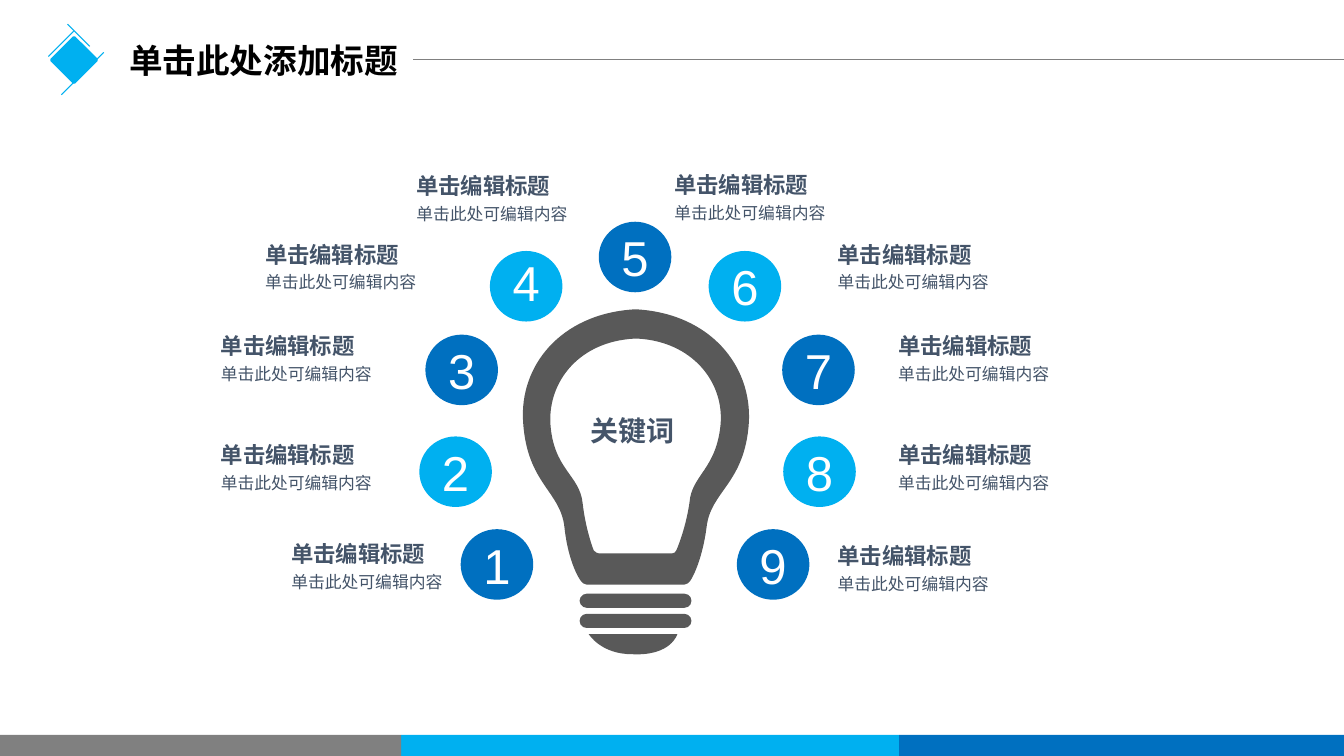
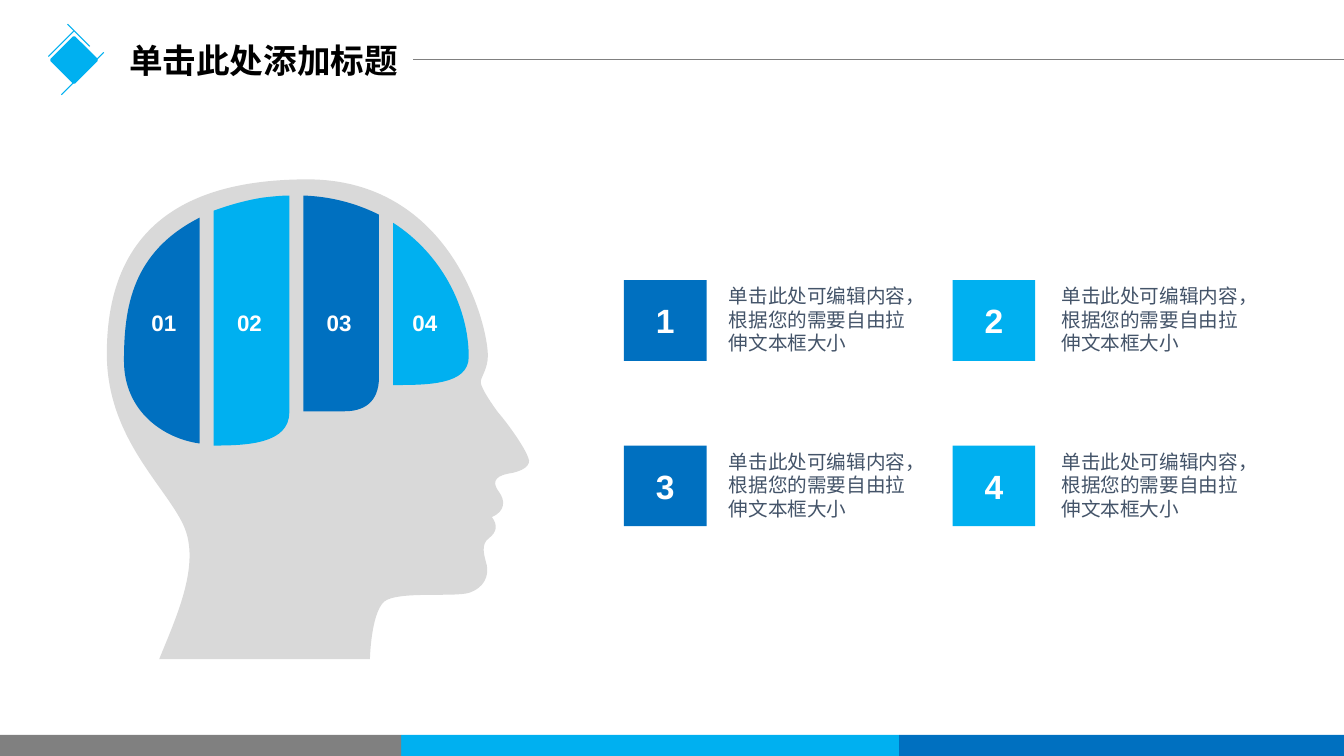
"""Build two idea slides: a light bulb with nine points and a head with four parts."""
from dataclasses import dataclass

from lxml import etree
from pptx import Presentation
from pptx.dml.color import RGBColor
from pptx.enum import shapes, text
from pptx.oxml.ns import qn
from pptx.util import Pt

PX = 9144
WIDTH, HEIGHT = 1333.33, 750


@dataclass(frozen=True)
class Theme:
    dark: str = "0070C0"
    light: str = "00B0F0"
    grey: str = "808080"
    bulb: str = "595959"
    head: str = "D9D9D9"
    ink: str = "445469"
    black: str = "000000"
    white: str = "FFFFFF"
    latin: str = "Arial"
    cjk: str = "Noto Sans CJK SC"
    title: int = 24
    number: int = 35
    square: int = 24
    keyword: int = 20
    heading: int = 16
    body: int = 14
    small: int = 12
    hairline: float = 0.75
    emblem_line: int = 2


T = Theme()
SHAPE = shapes.MSO_SHAPE
CENTER, LEFT = text.PP_ALIGN.CENTER, text.PP_ALIGN.LEFT
MIDDLE, TOP = text.MSO_ANCHOR.MIDDLE, text.MSO_ANCHOR.TOP

TITLE = "单击此处添加标题"
TITLE_BOX = (118, 35, 292, 50)
TITLE_RULE = (410, 59, WIDTH, 59)
DIAMOND = (51, 37, 45, 45)
EMBLEM_LINES = [(67, 24, 89, 46), (73, 31, 48, 56), (61, 94, 103, 52)]
FOOTER_TOP = 729
FOOTER_BANDS = [(398, 892, T.light), (892, WIDTH, T.dark), (0, 398, T.grey)]

KEYWORD, KEYWORD_BOX = "关键词", (553, 410, 150, 34)
LABEL_HEADING, LABEL_BODY = "单击编辑标题", "单击此处可编辑内容"
LABELS = [(289, 536), (219, 438), (219, 330), (263, 239), (413, 171),
          (669, 170), (831, 239), (891, 330), (891, 438), (831, 538)]
CIRCLE_SIZE = (72, 70)
CIRCLES = [(457, 525), (416, 433), (422, 332), (486, 249), (594, 220),
           (703, 249), (776, 332), (777, 433), (731, 525)]
RAISED_NUMBER, RAISED_INSET = 4, 13

BAR_TOPS = [609, 589]
BULB_BASE = [[(584, 629), (672, 629), (672, 629, 666, 651, 627, 649),
              (596, 649, 584, 629, 584, 629)]]
BULB = [
    [(633, 307), (628, 307), (556, 312, 515, 363, 519, 419),
     (523, 480, 556, 487, 560, 523), (564, 560, 576, 576, 576, 576),
     (577, 578, 580, 580, 582, 580), (679, 580),
     (681, 580, 684, 578, 685, 576), (685, 576, 696, 560, 701, 523),
     (705, 487, 739, 480, 743, 419), (746, 363, 705, 312, 633, 307)],
    [(715, 420), (711, 466, 686, 471, 684, 499),
     (680, 526, 671, 546, 671, 546), (670, 548, 669, 549, 667, 549),
     (594, 549), (592, 549, 591, 548, 589, 546),
     (589, 546, 581, 526, 578, 499), (575, 471, 549, 466, 546, 420),
     (544, 378, 575, 339, 629, 336), (633, 336),
     (686, 339, 718, 378, 715, 420)],
]

HEAD = [[
    (182, 521), (200, 560, 174, 614, 158, 654), (367, 654),
    (367, 654, 368, 609, 381, 597), (394, 586, 451, 593, 466, 588),
    (480, 583, 485, 572, 483, 561), (480, 550, 477, 540, 485, 534),
    (493, 528, 494, 521, 488, 513), (502, 507, 501, 496, 495, 488),
    (489, 480, 489, 473, 504, 470), (518, 468, 528, 462, 524, 454),
    (521, 445, 506, 423, 494, 409), (483, 394, 476, 382, 477, 378),
    (478, 373, 484, 365, 484, 353), (484, 321, 447, 178, 305, 178),
    (163, 178, 106, 244, 106, 351), (106, 434, 164, 482, 182, 521)]]
BRAIN = [
    ("01", 144, [[(123, 358), (123, 408, 162, 435, 198, 440), (198, 216),
                  (131, 250, 123, 305, 123, 358)]]),
    ("02", 229, [[(261, 196), (242, 199, 226, 204, 212, 209), (212, 442),
                  (246, 442, 287, 440, 287, 409), (287, 194),
                  (278, 194, 270, 195, 261, 196)]]),
    ("03", 318, [[(301, 194), (301, 408), (308, 408, 321, 408, 342, 408),
                  (360, 408, 376, 400, 376, 374), (376, 213),
                  (354, 202, 329, 195, 301, 194)]]),
    ("04", 403, [[(390, 221), (390, 382), (424, 382, 465, 382, 465, 354),
                  (465, 305, 438, 252, 390, 221)]]),
]
BRAIN_LABEL_TOP, BRAIN_LABEL_SIZE = 305, (37, 33)

CARD_TEXT = "单击此处可编辑内容，根据您的需要自由拉伸文本框大小"
CARD_COLUMNS = [(619, 723), (945, 1053)]
CARD_ROWS = [278, 442]
CARD_SQUARE, CARD_TEXT_SIZE, CARD_TEXT_DROP = (82, 80), (192, 71), 4


def emu(*lengths):
    return [round(v * PX) for v in lengths]


def rgb(colour):
    return RGBColor.from_string(colour)


def alternate(number):
    return T.dark if number % 2 else T.light


def write(sp, words, size, colour, bold=False, font=T.latin, align=LEFT, anchor=TOP):
    tf = sp.text_frame
    tf.word_wrap = True
    tf.auto_size = text.MSO_AUTO_SIZE.NONE
    tf.vertical_anchor = anchor
    tf.text = words
    p = tf.paragraphs[0]
    p.alignment = align
    p.font.size, p.font.bold, p.font.name = Pt(size), bold, font
    p.font.color.rgb = rgb(colour)
    defaults = p._p.get_or_add_pPr().find(qn("a:defRPr"))
    etree.SubElement(defaults, qn("a:ea")).set("typeface", font)
    return p


def add_text(parent, box, words, size, colour, **style):
    sp = parent.add_textbox(*emu(*box))
    tf = sp.text_frame
    tf.margin_left = tf.margin_right = tf.margin_top = tf.margin_bottom = 0
    return write(sp, words, size, colour, **style)


def paint(sp, colour):
    sp.shadow.inherit = False
    sp.fill.solid()
    sp.fill.fore_color.rgb = rgb(colour)
    sp.line.fill.background()
    return sp


def add_filled(parent, kind, box, colour):
    return paint(parent.add_shape(kind, *emu(*box)), colour)


def add_line(parent, ends, colour):
    line = parent.add_connector(shapes.MSO_CONNECTOR.STRAIGHT, *emu(*ends))
    line.line.color.rgb = rgb(colour)
    line.line.width = Pt(T.hairline)
    etree.SubElement(line._element.spPr, qn("a:effectLst"))


def bend(sp, segments):
    nodes = iter(list(sp._element.iter(qn("a:lnTo"))))
    for segment in segments:
        group = [next(nodes) for _ in range(len(segment) // 2)]
        if len(group) == 3:
            curve = etree.Element(qn("a:cubicBezTo"))
            group[0].addprevious(curve)
            for node in group:
                curve.append(node[0])
                node.getparent().remove(node)


def add_outline(parent, contours, colour):
    builder = parent.build_freeform(*contours[0][0], scale=PX)
    for index, (start, *segments) in enumerate(contours):
        if index:
            builder.move_to(*start)
        points = [pair for seg in segments for pair in zip(seg[::2], seg[1::2])]
        builder.add_line_segments(points, close=True)
    sp = paint(builder.convert_to_shape(), colour)
    bend(sp, [segment for contour in contours for segment in contour[1:]])


def add_slide(prs):
    s = prs.slides.add_slide(prs.slide_layouts[5])
    title = s.shapes.title
    title.left, title.top, title.width, title.height = emu(*TITLE_BOX)
    write(title, TITLE, T.title, T.black, bold=True, font=T.cjk, anchor=MIDDLE)
    add_line(s.shapes, TITLE_RULE, T.grey)
    footer = s.shapes.add_group_shape().shapes
    for left, right, colour in FOOTER_BANDS:
        box = (left, FOOTER_TOP, right - left, HEIGHT - FOOTER_TOP)
        add_filled(footer, SHAPE.RECTANGLE, box, colour)
    emblem = s.shapes.add_group_shape().shapes
    diamond = add_filled(emblem, SHAPE.DIAMOND, DIAMOND, T.light)
    diamond.line.color.rgb = rgb(T.light)
    diamond.line.width = Pt(T.emblem_line)
    for ends in EMBLEM_LINES:
        add_line(emblem, ends, T.light)
    return s.shapes


def build_bulb(prs):
    parent = add_slide(prs)
    for top in BAR_TOPS:
        bar = add_filled(parent, SHAPE.ROUNDED_RECTANGLE, (575, top, 111, 14), T.bulb)
        bar.adjustments[0] = 0.5
    for outline in (BULB_BASE, BULB):
        add_outline(parent, outline, T.bulb)
    for number, corner in enumerate(CIRCLES, 1):
        sp = add_filled(parent, SHAPE.OVAL, corner + CIRCLE_SIZE, alternate(number))
        write(sp, str(number), T.number, T.white, align=CENTER, anchor=MIDDLE)
        if number == RAISED_NUMBER:
            sp.text_frame.margin_bottom = RAISED_INSET * PX
    for x, y in LABELS:
        add_text(parent, (x, y, 214, 27), LABEL_HEADING, T.heading, T.ink, bold=True)
        add_text(parent, (x, y + 31, 255, 20), LABEL_BODY, T.small, T.ink)
    add_text(parent, KEYWORD_BOX, KEYWORD, T.keyword, T.ink, bold=True, align=CENTER)


def build_head(prs):
    parent = add_slide(prs)
    add_outline(parent, HEAD, T.head)
    for number, (label, x, outline) in enumerate(BRAIN, 1):
        add_outline(parent, outline, alternate(number))
        p = add_text(parent, (x, BRAIN_LABEL_TOP) + BRAIN_LABEL_SIZE, label, T.heading,
                     T.white, bold=True, align=CENTER, anchor=MIDDLE)
        p.line_spacing = 0.9
    cards = [(y, columns) for y in CARD_ROWS for columns in CARD_COLUMNS]
    for number, (y, (square_x, text_x)) in enumerate(cards, 1):
        sp = add_filled(parent, SHAPE.RECTANGLE, (square_x, y) + CARD_SQUARE,
                        alternate(number))
        write(sp, str(number), T.square, T.white, bold=True, align=CENTER, anchor=MIDDLE)
        add_text(parent, (text_x, y + CARD_TEXT_DROP) + CARD_TEXT_SIZE, CARD_TEXT,
                 T.body, T.ink)


def main():
    prs = Presentation()
    prs.slide_width, prs.slide_height = emu(WIDTH, HEIGHT)
    build_bulb(prs)
    build_head(prs)
    prs.save("out.pptx")


if __name__ == "__main__":
    main()
